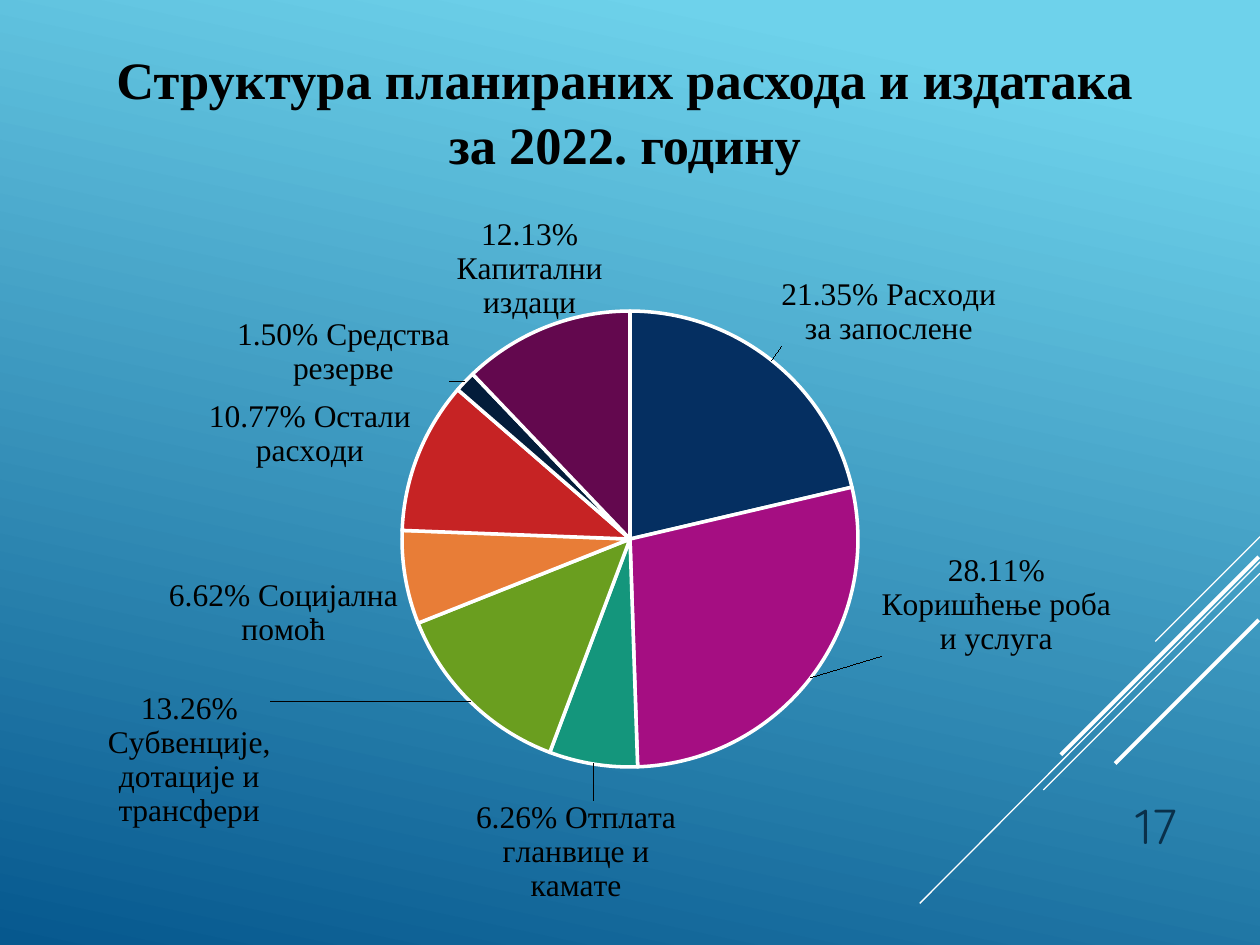
from dataclasses import dataclass
from itertools import accumulate
from math import cos, pi, sin

from lxml.etree import SubElement
from pptx import Presentation
from pptx.chart.data import CategoryChartData
from pptx.dml.color import RGBColor
from pptx.enum.chart import XL_CHART_TYPE, XL_LABEL_POSITION
from pptx.enum.shapes import MSO_CONNECTOR
from pptx.enum.text import MSO_ANCHOR, PP_ALIGN
from pptx.oxml import parse_xml
from pptx.oxml.ns import nsdecls, qn
from pptx.util import Pt

TITLE = "Структура планираних расхода и издатака за 2022. годину"
PAGE_NUMBER = "17"
NUMBER_FORMAT = "#,##0.00"
SLICES = [
    (21.35, "21.35% Расходи за запослене", "052F61", (446.6, 158.9, 122.9, 38.9)),
    (28.11, "28.11% Коришћење роба и услуга", "A50E82", (503.8, 316.6, 131.4, 58.3)),
    (6.26, "6.26% Отплата гланвице и камате", "14967C", (272, 457.7, 114.3, 58.3)),
    (13.26, "13.26% Субвенције, дотације и трансфери", "6A9E1F", (62.1, 395.4, 92.6, 77.7)),
    (6.62, "6.62% Социјална помоћ", "E87D37", (96, 330.9, 131.4, 38.9)),
    (10.77, "10.77% Остали расходи", "C62324", (119.4, 228.6, 115.4, 38.9)),
    (1.5, "1.50% Средства резерве", "031C3A", (135.9, 181.7, 121.1, 38.9)),
    (12.13, "12.13% Капитални издаци", "63084E", (261.5, 124.6, 82.9, 58.3)),
]
DARK_LEADERS = {6}
RAYS = [
    ((720, 306.7), (660.2, 366.5), 0.75),
    ((720, 321.1), (525.6, 516.2), 0.75),
    ((720, 327.6), (596.2, 451.4), 0.75),
    ((719.3, 318.2), (606.2, 431.3), 2.25),
    ((719.3, 354.2), (637.2, 436.3), 2.25),
]
TITLE_BOX = (48.2, 22.8, 617.8, 79.9)
NUMBER_BOX = (612, 439.2, 67.7, 52.6)
CHART_BOX = (24, 120, 672, 396)
PLOT = {"x": 0, "y": 0.146, "w": 1, "h": 0.658}
LABEL_GAP = 4.25


@dataclass(frozen=True)
class Theme:
    light: str = "6ED2EB"
    deep: str = "06588E"
    white: str = "FFFFFF"
    black: str = "000000"
    navy: str = "0A304A"
    serif: str = "Times New Roman"
    sans: str = "Quicksand"
    title_size: int = 30
    number_size: int = 28
    label_size: int = 18
    chart_size: int = 10


THEME = Theme()


def style_font(font, name, size, color, bold=False):
    font.name, font.size, font.bold = name, Pt(size), bold
    font.color.rgb = RGBColor.from_string(color)


def add_text(slide, box, text, alignment, anchor, spacing, style):
    frame = slide.shapes.add_textbox(*map(Pt, box)).text_frame
    frame.word_wrap = True
    frame.vertical_anchor = anchor
    paragraph = frame.paragraphs[0]
    paragraph.alignment = alignment
    paragraph.line_spacing = spacing
    run = paragraph.add_run()
    run.text = text
    style_font(run.font, *style)


def add_ray(slide, start, end, width):
    ray = slide.shapes.add_connector(MSO_CONNECTOR.STRAIGHT, *map(Pt, start + end))
    ray.line.color.rgb = RGBColor.from_string(THEME.white)
    ray.line.width = Pt(width)
    SubElement(ray._element.spPr, qn("a:effectLst"))


def manual_layout(values, inner=False):
    parts = ""
    if inner:
        parts = '<c:layoutTarget val="inner"/><c:xMode val="edge"/><c:yMode val="edge"/>'
    parts += "".join(f'<c:{key} val="{value:.4f}"/>' for key, value in values.items())
    return parse_xml(
        f'<c:layout {nsdecls("c")}><c:manualLayout>{parts}</c:manualLayout></c:layout>'
    )


def label_offset(middle, box):
    left, top, width, height = box
    chart_left, chart_top, chart_width, chart_height = CHART_BOX
    plot_height = PLOT["h"] * chart_height
    reach = plot_height / 2 + LABEL_GAP
    angle = 2 * pi * middle
    across, up = sin(angle), cos(angle)
    home_left = chart_left + chart_width / 2 + reach * across - (width if across < 0 else 0)
    center_y = chart_top + PLOT["y"] * chart_height + plot_height / 2
    home_top = center_y - reach * up - (height if up > 0 else 0)
    return {"x": (left - home_left) / chart_width, "y": (top - home_top) / chart_height}


def add_pie(slide):
    values = [item[0] for item in SLICES]
    data = CategoryChartData(number_format=NUMBER_FORMAT)
    data.categories = [str(number) for number in range(1, len(values) + 1)]
    data.add_series("Series 1", values)
    chart = slide.shapes.add_chart(XL_CHART_TYPE.PIE, *map(Pt, CHART_BOX), data).chart
    chart.has_legend = chart.has_title = False
    style_font(chart.font, THEME.sans, THEME.chart_size, THEME.white)
    plot = chart.plots[0]
    plot.vary_by_categories = True
    plot_area = chart._chartSpace.chart.plotArea
    for layout in plot_area.findall(qn("c:layout")):
        plot_area.remove(layout)
    plot_area.insert(0, manual_layout(PLOT, inner=True))
    series = plot.series[0]
    labels = series.data_labels
    labels.show_value = True
    labels.number_format = NUMBER_FORMAT
    labels.number_format_is_linked = False
    labels.position = XL_LABEL_POSITION.OUTSIDE_END
    style_font(labels.font, THEME.serif, THEME.label_size, THEME.black)
    total = sum(values)
    for index, (end, item) in enumerate(zip(accumulate(values), SLICES)):
        value, text, color, box = item
        point = series.points[index]
        point.format.fill.solid()
        point.format.fill.fore_color.rgb = RGBColor.from_string(color)
        point.format.line.color.rgb = RGBColor.from_string(THEME.white)
        point.format.line.width = Pt(2)
        label = point.data_label
        paragraph = label.text_frame.paragraphs[0]
        leader_color = THEME.black if index in DARK_LEADERS else THEME.white
        style_font(paragraph.font, THEME.serif, THEME.label_size, leader_color)
        run = paragraph.add_run()
        run.text = text
        style_font(run.font, THEME.serif, THEME.label_size, THEME.black)
        label.position = XL_LABEL_POSITION.OUTSIDE_END
        offset = label_offset((end - value / 2) / total, box)
        label._dLbl.find(qn("c:idx")).addnext(manual_layout(offset))


def main():
    """Build the slide with the structure of planned expenditure."""
    presentation = Presentation()
    presentation.slide_width, presentation.slide_height = Pt(720), Pt(540)
    slide = presentation.slides.add_slide(presentation.slide_layouts[6])
    fill = slide.background.fill
    fill.gradient()
    fill.gradient_angle = 258
    stops = zip(fill.gradient_stops, (0.1, 1), (THEME.light, THEME.deep))
    for stop, position, color in stops:
        stop.position = position
        stop.color.rgb = RGBColor.from_string(color)
    for ray in RAYS:
        add_ray(slide, *ray)
    add_text(slide, NUMBER_BOX, PAGE_NUMBER, PP_ALIGN.RIGHT, MSO_ANCHOR.BOTTOM, 1,
             (THEME.sans, THEME.number_size, THEME.navy))
    add_text(slide, TITLE_BOX, TITLE, PP_ALIGN.CENTER, MSO_ANCHOR.MIDDLE, 1.03,
             (THEME.serif, THEME.title_size, THEME.black, True))
    add_pie(slide)
    presentation.save("out.pptx")


if __name__ == "__main__":
    main()
